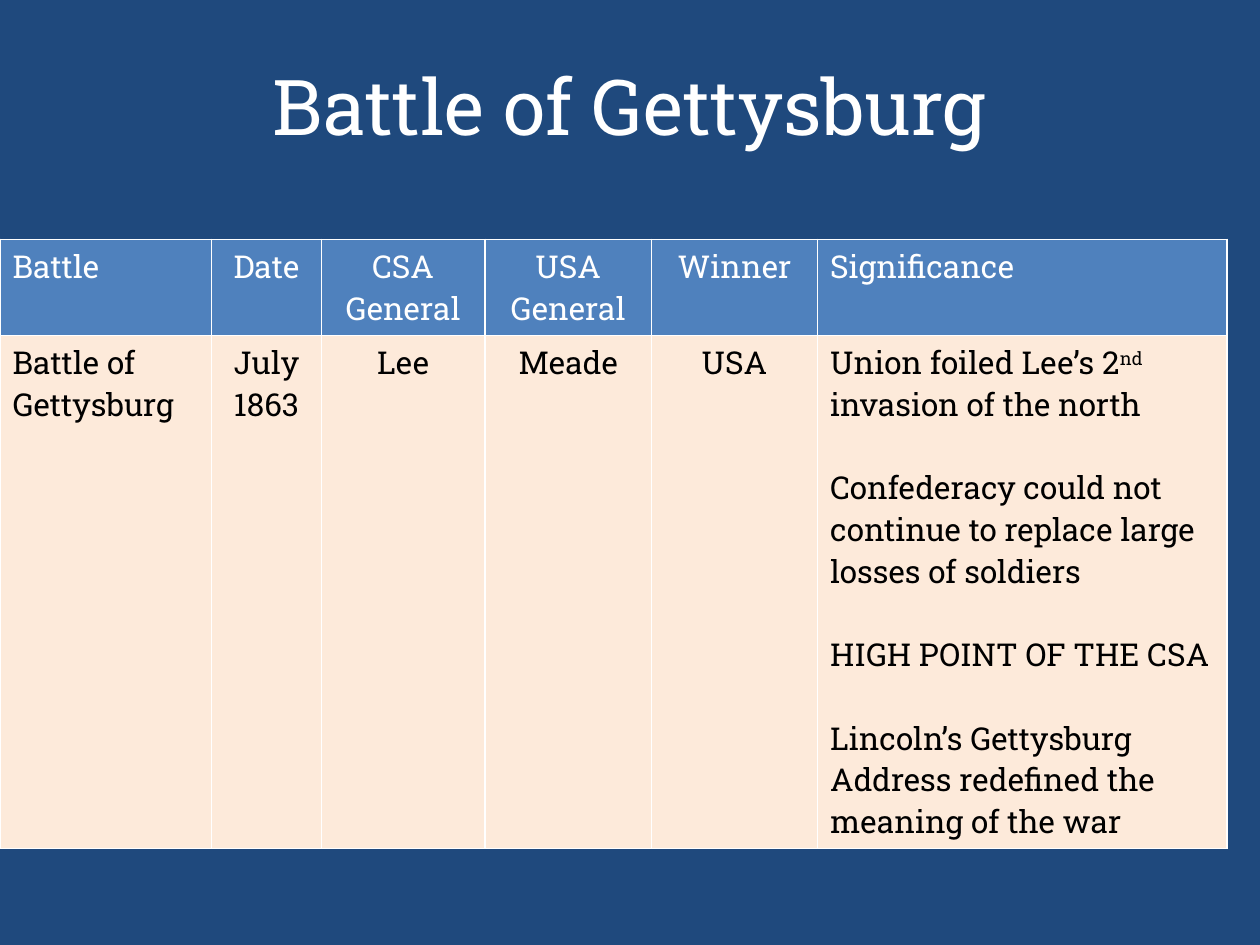
from lxml.etree import SubElement
from pptx import Presentation
from pptx.dml.color import RGBColor
from pptx.enum.text import MSO_ANCHOR, PP_ALIGN
from pptx.oxml import parse_xml
from pptx.oxml.ns import nsdecls
from pptx.util import Inches, Pt

FONT = "Roboto Slab"
NAVY = RGBColor(0x1F, 0x49, 0x7D)
BLUE = RGBColor(0x4F, 0x81, 0xBD)
PEACH = RGBColor(0xFD, 0xEA, 0xDA)
WHITE = RGBColor(0xFF, 0xFF, 0xFF)
BLACK = RGBColor(0, 0, 0)

TITLE = "Battle of Gettysburg"
COLUMNS = [
    (1.68, PP_ALIGN.LEFT),
    (0.87, PP_ALIGN.CENTER),
    (1.3, PP_ALIGN.CENTER),
    (1.32, PP_ALIGN.CENTER),
    (1.32, PP_ALIGN.CENTER),
    (3.25, PP_ALIGN.LEFT),
]
HEADERS = [["Battle"], ["Date"], ["CSA", "General"], ["USA", "General"],
           ["Winner"], ["Significance"]]
SIGNIFICANCE = [
    ("Union foiled Lee’s 2", "nd", " invasion of the north"),
    "Confederacy could not continue to replace large losses of soldiers",
    "HIGH POINT OF THE CSA",
    "Lincoln’s Gettysburg Address redefined the meaning of the war",
]
BATTLE = [["Battle of Gettysburg"], ["July 1863"], ["Lee"], ["Meade"], ["USA"],
          SIGNIFICANCE]
ROWS = [
    (0.76, HEADERS, BLUE, WHITE, 0),
    (4.07, BATTLE, PEACH, BLACK, 24),
]


def style(para, size, color, align):
    para.font.name = FONT
    para.font.size = Pt(size)
    para.font.bold = False
    para.font.color.rgb = color
    para.alignment = align


def add_borders(cell):
    properties = cell._tc.get_or_add_tcPr()
    for index, side in enumerate(("lnL", "lnR", "lnT", "lnB")):
        line = parse_xml(f'<a:{side} {nsdecls("a")} w="{Pt(1)}"><a:solidFill>'
                         f'<a:srgbClr val="{WHITE}"/></a:solidFill></a:{side}>')
        properties.insert(index, line)


def fill_cell(cell, texts, fill, color, align, gap):
    cell.fill.solid()
    cell.fill.fore_color.rgb = fill
    add_borders(cell)
    frame = cell.text_frame
    for index, text in enumerate(texts):
        para = frame.add_paragraph() if index else frame.paragraphs[0]
        style(para, 18, color, align)
        para.space_before = Pt(gap if index else 0)
        parts = (text,) if isinstance(text, str) else text
        for position, part in enumerate(parts):
            span = para.add_run()
            span.text = part
            if position == 1:
                span._r.get_or_add_rPr().set("baseline", "30000")


deck = Presentation()
deck.slide_width, deck.slide_height = Inches(10), Inches(7.5)
page = deck.slides.add_slide(deck.slide_layouts[5])
page.background.fill.solid()
page.background.fill.fore_color.rgb = NAVY

title = page.shapes.title
title.left, title.top = Inches(0.5), Inches(0.33)
title.width, title.height = Inches(9), Inches(1)
title.text_frame.text = TITLE
title.text_frame.vertical_anchor = MSO_ANCHOR.MIDDLE
style(title.text_frame.paragraphs[0], 44, WHITE, PP_ALIGN.CENTER)

width = sum(column[0] for column in COLUMNS)
height = sum(row[0] for row in ROWS)
table = page.shapes.add_table(len(ROWS), len(COLUMNS), Inches(0), Inches(1.9),
                              Inches(width), Inches(height)).table
for column, (column_width, _) in zip(table.columns, COLUMNS):
    column.width = Inches(column_width)
for r, (row_height, texts, fill, color, gap) in enumerate(ROWS):
    table.rows[r].height = Inches(row_height)
    for c, (_, align) in enumerate(COLUMNS):
        fill_cell(table.cell(r, c), texts[c], fill, color, align, gap)

deck.save("out.pptx")
